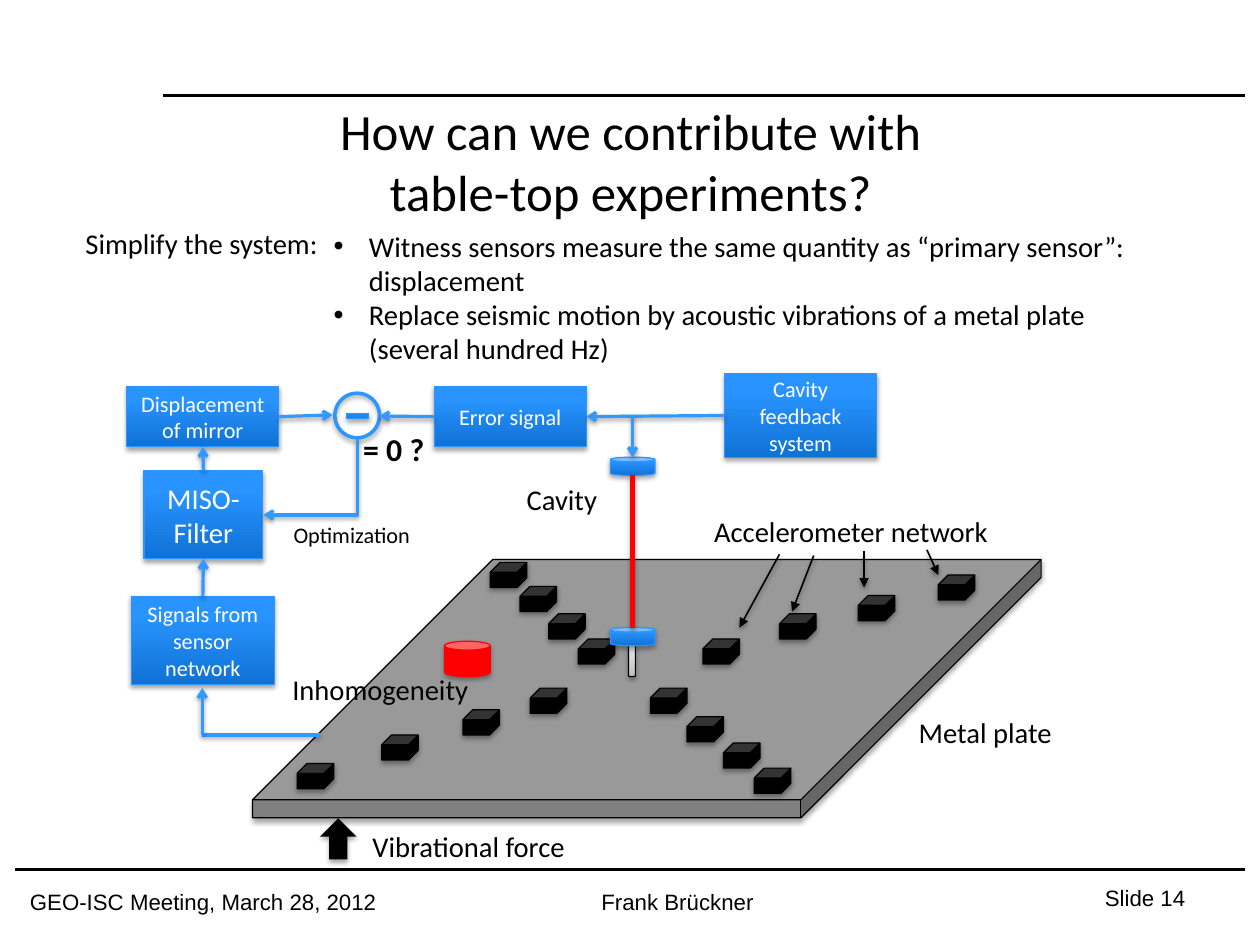
from copy import deepcopy
from dataclasses import dataclass

from lxml.etree import SubElement
from pptx import Presentation
from pptx.dml.color import RGBColor
from pptx.enum.shapes import MSO_CONNECTOR as Link, MSO_SHAPE as Preset
from pptx.enum.text import MSO_ANCHOR as Anchor, MSO_AUTO_SIZE as AutoSize, PP_ALIGN as Align
from pptx.oxml.ns import qn
from pptx.util import Emu, Inches, Pt


@dataclass(frozen=True)
class Theme:
    body: str = "Calibri"
    footer: str = "Arial"
    black: str = "000000"
    white: str = "FFFFFF"
    red: str = "FF0000"
    plate: str = "808080"
    edge: str = "2D96FE"
    signal: str = "3399FF"
    blue: tuple = ((0, "0F72D5"), (0.8, "2994FF"), (1, "2B95FF"))
    silver: tuple = ((0, "BDBDBD"), (0.35, "D1D1D1"), (1, "EEEEEE"))
    title: int = 32
    equation: int = 20
    text: int = 18
    small: int = 14


THEME = Theme()

# The page is the 28 by 21 cm screen format; places and lengths are in grid cells.
PAGE_WIDTH, PAGE_HEIGHT = Emu(10080625), Emu(7559675)
CELL = Inches(0.1)

TITLE = ["How can we contribute with", "table-top experiments?"]
FOOTER = "GEO-ISC Meeting, March 28, 2012\t\tFrank Brückner "
PAGE = "Slide 14"
BULLETS = [
    "Witness sensors measure the same quantity as “primary sensor”: displacement",
    "Replace seismic motion by acoustic vibrations of a metal plate (several hundred Hz)",
]
LABELS = [  # text, left, top, width
    ("Metal plate", 79.4, 62.1, 13.9),
    ("Accelerometer network", 61.5, 44.5, 26.3),
    ("Cavity", 45.1, 41.7, 8.3),
    ("Vibrational force", 31.6, 72, 19.2),
    ("Inhomogeneity", 24.6, 58.3, 17.6),
    ("Simplify the system:", 6.5, 19.3, 22.7),
]
BOXES = {  # text, place, type size
    "sensors": ("Signals from sensor network", (11.5, 52.2, 12.5, 7.7), THEME.small),
    "filter": ("MISO-Filter", (12.6, 41.2, 10.4, 7.7), THEME.text),
    "mirror": ("Displacement of mirror", (11.1, 33.8, 13.3, 5.3), THEME.small),
    "feedback": ("Cavity feedback system", (63.4, 32.7, 13.3, 7.3), THEME.small),
    "error": ("Error signal", (38, 33.8, 13.3, 5.3), THEME.small),
}
ACCELEROMETERS = [
    (46.4, 60.2), (40.5, 62.1), (33.4, 64.3), (26, 66.8),
    (61.5, 55.9), (68.2, 53.7), (75.1, 52.1), (82.1, 50.3),
    (56.9, 60.2), (60.1, 62.7), (63.3, 65),
    (42.9, 49.2), (45.5, 51.3), (48, 53.7), (50.6, 55.9), (66, 67.2),
]
ACCELEROMETER_SIZE = (3.2, 2.2)
POINTERS = [
    ((68.2, 48.5), (64.7, 54.9)), ((71.2, 48.6), (69.3, 53.5)),
    ((75.6, 48.2), (75.6, 51.4)), ((81.1, 48.1), (82.1, 50.3)),
]
CAVITY_X, FEEDBACK_Y = 55.35, 36.35
MIRROR_SIZE = (3.9, 1.6)
TOP, LEFT, BOTTOM, RIGHT = range(4)

presentation = Presentation()
presentation.slide_width = PAGE_WIDTH
presentation.slide_height = PAGE_HEIGHT
slide = presentation.slides.add_slide(presentation.slide_layouts[6])
shapes = slide.shapes


def cells(*values):
    return [round(value * CELL) for value in values]


def rgb(color):
    return RGBColor.from_string(color)


def cast_shadow(item, opacity=35, distance=1.8):
    effects = SubElement(item._element.spPr, qn("a:effectLst"))
    shadow = SubElement(effects, qn("a:outerShdw"), blurRad=str(Pt(3.1)), dist=str(Pt(distance)),
                        dir="5400000", rotWithShape="0")
    color = SubElement(shadow, qn("a:srgbClr"), val=THEME.black)
    SubElement(color, qn("a:alpha"), val=str(opacity * 1000))


def fill_gradient(shape, stops):
    """Run the stops from the bottom of the shape to its top."""
    shape.fill.gradient()
    shape.fill.gradient_angle = 90
    stop_list = shape._element.spPr.find(".//" + qn("a:gsLst"))
    stop_list.append(deepcopy(stop_list[-1]))
    for stop, (position, color) in zip(shape.fill.gradient_stops, stops):
        stop.position = position
        stop.color.rgb = rgb(color)


def add_solid(preset, place, fill=None, line=None, width=0.75, adjustment=None):
    shape = shapes.add_shape(preset, *cells(*place))
    if adjustment is not None:
        shape.adjustments[0] = adjustment
    if fill is None:
        shape.fill.background()
    elif isinstance(fill, tuple):
        fill_gradient(shape, fill)
    else:
        shape.fill.solid()
        shape.fill.fore_color.rgb = rgb(fill)
    if line:
        shape.line.color.rgb = rgb(line)
        shape.line.width = Pt(width)
    else:
        shape.line.fill.background()
    cast_shadow(shape)
    return shape


def write(paragraph, text, size, color=THEME.black, font=THEME.body, bold=False):
    run = paragraph.add_run()
    run.text = text
    run.font.size, run.font.name, run.font.bold = Pt(size), font, bold
    run.font.color.rgb = rgb(color)


def add_text(place, align=Align.LEFT, wrap=True, grow=False):
    frame = shapes.add_textbox(*cells(*place)).text_frame
    frame.word_wrap = wrap
    frame.auto_size = AutoSize.SHAPE_TO_FIT_TEXT if grow else AutoSize.NONE
    frame.paragraphs[0].alignment = align
    return frame


def add_label(text, left, top, width, height=4, size=THEME.text, bold=False):
    frame = add_text((left, top, width, height), wrap=False, grow=True)
    write(frame.paragraphs[0], text, size, bold=bold)


def add_line(start, end, color=THEME.signal, width=2, head=None, shadow=True, kind=Link.STRAIGHT):
    line = shapes.add_connector(kind, *cells(*start, *end))
    line.line.color.rgb = rgb(color)
    line.line.width = Pt(width)
    if head:
        SubElement(line._element.spPr.find(qn("a:ln")), qn("a:tailEnd"), type=head)
    if shadow:
        cast_shadow(line, 38, 1.6)
    else:
        SubElement(line._element.spPr, qn("a:effectLst"))
    return line


# Frame of the page
for left, row in ((14.3, 8.34), (1.3, 76.05)):
    add_line((left, row), (108.9, row), THEME.black, shadow=False)
page = add_text((79, 76.9, 25.7, 4.1), Align.RIGHT).paragraphs[0]
write(page, PAGE, THEME.small, font=THEME.footer)
footer = add_text((0, 77.2, 69.1, 4.1), Align.CENTER).paragraphs[0]
tabs = SubElement(footer._p.get_or_add_pPr(), qn("a:tabLst"))
for column in (40, 50):
    SubElement(tabs, qn("a:tab"), pos=str(column * CELL), algn="l")
write(footer, FOOTER, THEME.small, font=THEME.footer)
title = add_text((10.2, 8.25, 90, 12.5), Align.CENTER).paragraphs[0]
write(title, TITLE[0], THEME.title)
title.add_line_break()
write(title, TITLE[1], THEME.title)

# Plate, accelerometers and cavity
add_solid(Preset.CUBE, (22.1, 48.95, 69, 22.6), THEME.plate, THEME.black, adjustment=0.93)
for corner in ACCELEROMETERS:
    add_solid(Preset.CUBE, corner + ACCELEROMETER_SIZE, THEME.black, THEME.black, adjustment=0.39)
add_solid(Preset.CAN, (55, 56.1, 0.6, 3.1), THEME.silver, THEME.black)
for row in (54.9, 40):
    add_solid(Preset.CAN, (CAVITY_X - MIRROR_SIZE[0] / 2, row) + MIRROR_SIZE, THEME.blue, THEME.edge)
add_line((CAVITY_X, 41.6), (CAVITY_X, 54.9), THEME.red, 3)
add_solid(Preset.UP_ARROW, (28, 71.6, 3.2, 3.6), THEME.black)
add_solid(Preset.CAN, (38.9, 56.1, 4, 3.1), THEME.red, THEME.red)

# Labels and bullets
for label in LABELS:
    add_label(*label)
bullets = add_text((28.2, 19.5, 74.2, 13.1), grow=True)
for index, text in enumerate(BULLETS):
    paragraph = bullets.add_paragraph() if index else bullets.paragraphs[0]
    properties = paragraph._p.get_or_add_pPr()
    properties.set("marL", str(Inches(0.31)))
    properties.set("indent", str(-Inches(0.31)))
    SubElement(properties, qn("a:buFont"), typeface=THEME.footer)
    SubElement(properties, qn("a:buChar"), char="•")
    write(paragraph, text, THEME.text)

# Signal flow
boxes = {}
for name, (text, place, size) in BOXES.items():
    boxes[name] = add_solid(Preset.RECTANGLE, place, THEME.blue, THEME.edge)
    frame = boxes[name].text_frame
    frame.word_wrap = True
    frame.vertical_anchor = Anchor.MIDDLE
    frame.paragraphs[0].alignment = Align.CENTER
    write(frame.paragraphs[0], text, size, THEME.white)
add_solid(Preset.MATH_MINUS, (30, 35.4, 2.6, 2), THEME.blue, THEME.edge)
add_solid(Preset.OVAL, (29.3, 34.4, 3.9, 3.9), line=THEME.edge, width=2.25)

for source, side, target, target_side in (
        ("sensors", TOP, "filter", BOTTOM), ("filter", TOP, "mirror", BOTTOM),
        ("feedback", LEFT, "error", RIGHT)):
    link = add_line((0, 0), (1, 1), head="arrow")
    link.begin_connect(boxes[source], side)
    link.end_connect(boxes[target], target_side)
for source, side, end in (("mirror", RIGHT, (29.1, 36.3)), ("error", LEFT, (33.2, 36.4))):
    add_line((0, 0), end, head="arrow").begin_connect(boxes[source], side)
add_line((28, 64.3), (17.7, 64.3))
add_line((17.7, 64.3), (17.7, 60.2), head="arrow")
add_line((CAVITY_X, FEEDBACK_Y), (CAVITY_X, 40), head="arrow")
for start, end in POINTERS:
    add_line(start, end, THEME.black, 1, "triangle")

# A quarter turn makes the elbow run down from the circle and left to the filter
elbow = add_line((23.8, 37.6), (30.5, 45.8), head="arrow", kind=Link.ELBOW)
elbow._element.spPr.find(qn("a:prstGeom")).set("prst", "bentConnector2")
elbow._element.spPr.find(qn("a:xfrm")).set("rot", "5400000")
add_label("= 0 ?", 30.8, 37.1, 7.4, 4.4, THEME.equation, bold=True)
add_label("Optimization", 24.7, 45.1, 12.3, 3.4, THEME.small)

presentation.save("out.pptx")
